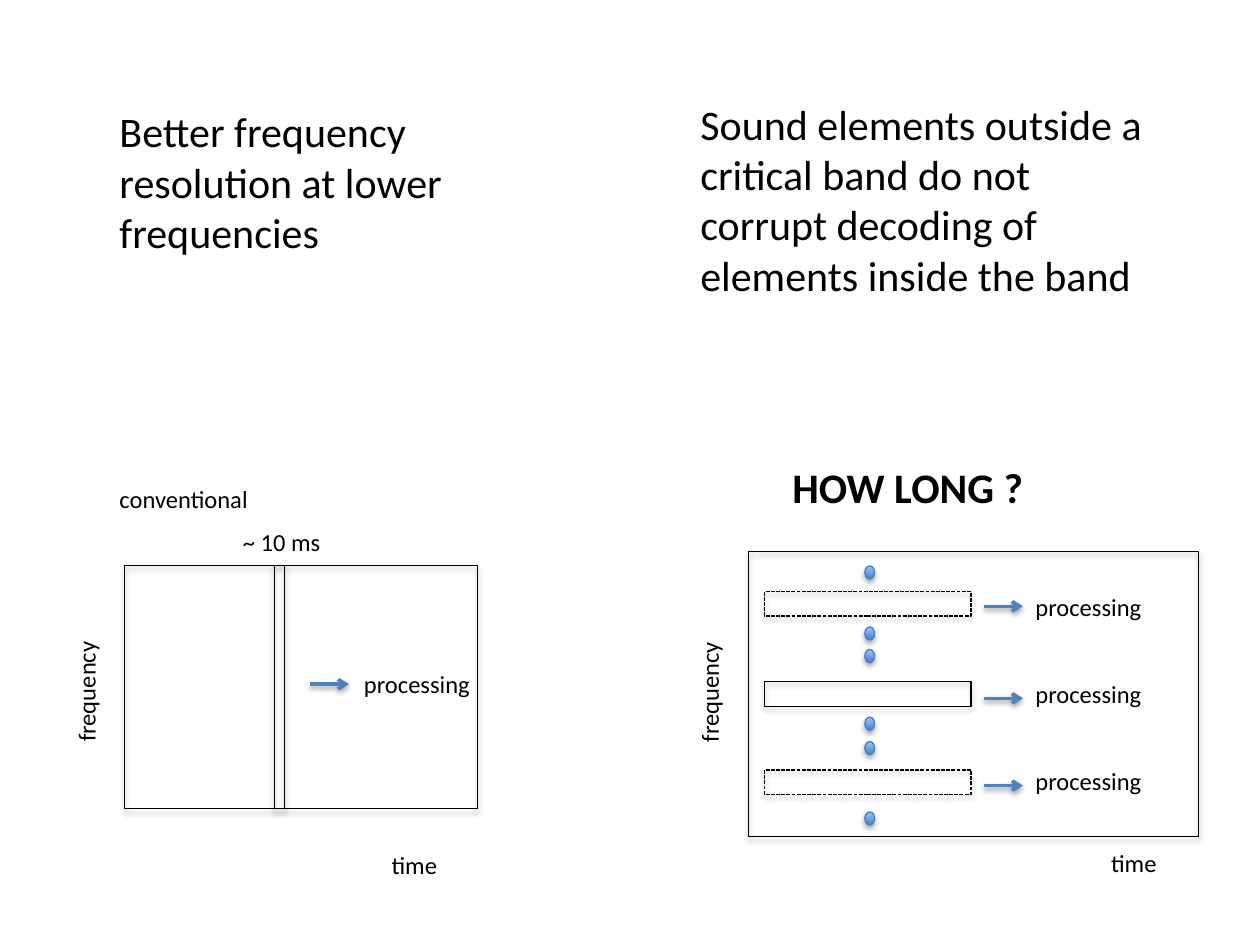
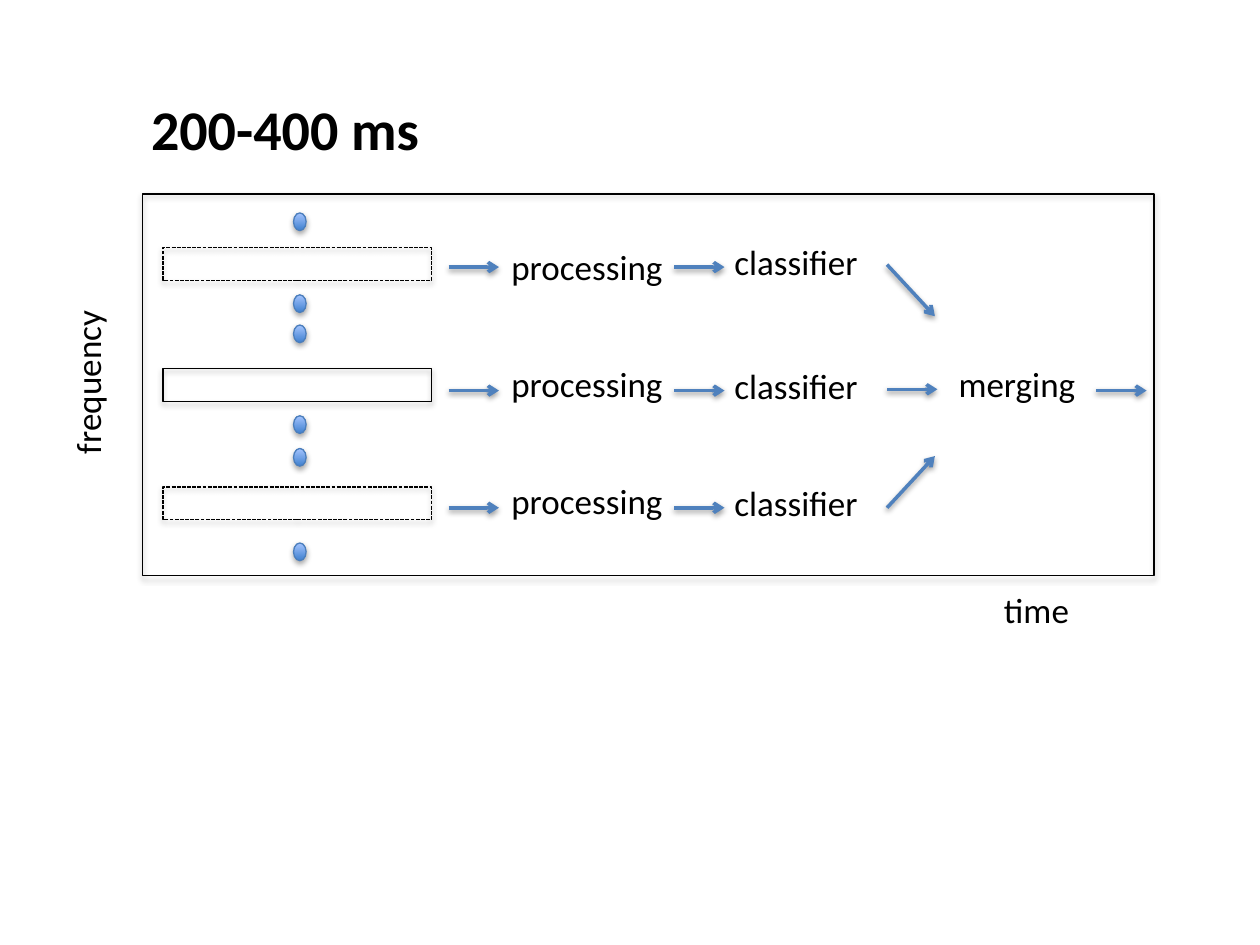
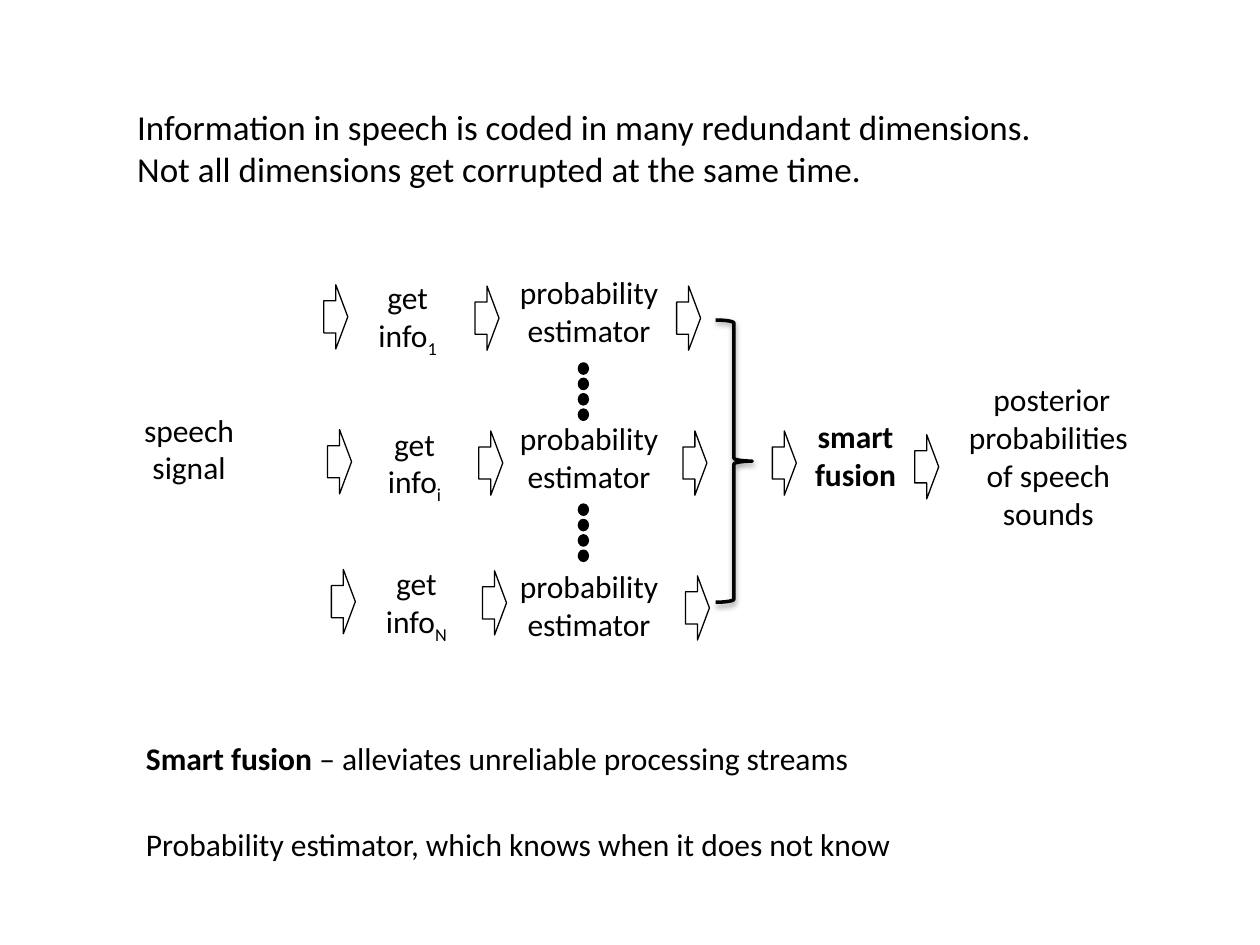
from lxml.etree import SubElement
from pptx import Presentation
from pptx.dml.color import RGBColor
from pptx.enum.dml import MSO_LINE
from pptx.enum.shapes import MSO_CONNECTOR, MSO_SHAPE
from pptx.enum.text import MSO_AUTO_SIZE, PP_ALIGN
from pptx.oxml.ns import qn
from pptx.util import Inches, Pt

BLACK = RGBColor(0x00, 0x00, 0x00)
ARROW_BLUE = RGBColor(0x4F, 0x81, 0xBD)
DOT_EDGE = RGBColor(0x4B, 0x7E, 0xBC)
DOT_DARK = RGBColor(0x3F, 0x80, 0xCE)
DOT_LIGHT = RGBColor(0xA4, 0xC4, 0xFF)
FONT = "Calibri"
BOLD, SUBSCRIPT = "bold", "subscript"
ARROW = "arrow"
SOFT, STRONG = (23000, 35000), (20000, 38000)

deck = Presentation()
deck.slide_width = Inches(10)
deck.slide_height = Inches(7.5)
COL = deck.slide_width / 100
ROW = deck.slide_height / 75


def write(slide, box, lines, size, align=PP_ALIGN.LEFT, wrap=False, rotation=0):
    left, top, width, height = box
    label = slide.shapes.add_textbox(
        int(left * COL), int(top * ROW), int(width * COL), int(height * ROW))
    label.rotation = rotation
    frame = label.text_frame
    frame.word_wrap = wrap
    frame.auto_size = MSO_AUTO_SIZE.SHAPE_TO_FIT_TEXT
    for number, line in enumerate(lines):
        paragraph = frame.add_paragraph() if number else frame.paragraphs[0]
        paragraph.alignment = align
        for piece in line if isinstance(line, list) else [line]:
            words, mark = piece if isinstance(piece, tuple) else (piece, None)
            run = paragraph.add_run()
            run.text = words
            run.font.name = FONT
            run.font.size = Pt(size)
            run.font.color.rgb = BLACK
            run.font.bold = mark == BOLD
            if mark == SUBSCRIPT:
                run.font._element.set("baseline", "-25000")


def draw(slide, kind, box, colour=BLACK, weight=0.75, fill=(), dash=None, shadow=None):
    left, top, width, height = box
    x, y, w, h = int(left * COL), int(top * ROW), int(width * COL), int(height * ROW)
    if kind == ARROW:
        mark = slide.shapes.add_connector(MSO_CONNECTOR.STRAIGHT, x, y, x + w, y + h)
    else:
        mark = slide.shapes.add_shape(kind, x, y, w, h)
        if len(fill) == 2:
            mark.fill.gradient()
            mark.fill.gradient_angle = 90
            for stop, shade in zip(mark.fill.gradient_stops, fill):
                stop.color.rgb = shade
        elif fill:
            mark.fill.solid()
            mark.fill.fore_color.rgb = fill[0]
        else:
            mark.fill.background()
        mark.shadow.inherit = False
    mark.line.color.rgb = colour
    mark.line.width = Pt(weight)
    if dash:
        mark.line.dash_style = dash
    if kind == ARROW:
        SubElement(mark.line._get_or_add_ln(), qn("a:tailEnd"), type="arrow")
    properties = mark._element.spPr
    effects = properties.find(qn("a:effectLst"))
    if effects is None:
        effects = SubElement(properties, qn("a:effectLst"))
    if shadow:
        distance, alpha = shadow
        outer = SubElement(effects, qn("a:outerShdw"), blurRad="40000",
                           dist=str(distance), dir="5400000", rotWithShape="0")
        black = SubElement(outer, qn("a:srgbClr"), val=str(BLACK))
        SubElement(black, qn("a:alpha"), val=str(alpha))


bands, classifiers, fusion = [deck.slides.add_slide(deck.slide_layouts[6]) for _ in range(3)]
flow = dict(colour=ARROW_BLUE, weight=2, shadow=STRONG)

write(bands, (54.6, 7.3, 38.9, 20.2),
      ["Sound elements outside a critical band do not corrupt decoding of "
       "elements inside the band"], 24, wrap=True)
write(bands, (8.5, 7.9, 32, 13.1),
      ["Better frequency resolution at lower frequencies"], 24, wrap=True)
write(bands, (61.9, 36.1, 20.6, 5), [[("HOW LONG ?", BOLD)]], 24)

for left, width in ((9.9, 28), (21.8, 0.8)):
    draw(bands, MSO_SHAPE.RECTANGLE, (left, 44.9, width, 19.3), shadow=SOFT)
draw(bands, ARROW, (24.6, 54.3, 3.1, 0), **flow)
for words, left, top, width in (("conventional", 8.5, 37.9, 12.4), ("~ 10 ms", 18.3, 41.3, 8.2),
                                ("processing", 27.9, 52.6, 10.5), ("time", 30.1, 67, 5.7)):
    write(bands, (left, top, width, 3.4), [words], 14)
write(bands, (1.8, 53.2, 10.1, 3.4), ["frequency"], 14, PP_ALIGN.CENTER, rotation=270)

for slide, left, top, width, across, down, size, time_at, processing_width, axis in (
        (bands, 59.4, 43.8, 35.7, 0.77, 0.745, 14, (87.2, 66.8, 5.7, 3.4), 10.5, (10.1, 3.4)),
        (classifiers, 11.3, 15.4, 80.3, 1, 1, 20, (78.7, 46.2, 8.4, 4.4), 16.5, (13.5, 5.1))):
    draw(slide, MSO_SHAPE.RECTANGLE, (left, top, width, 30.3 * down), shadow=SOFT)
    for bar, arrow, label, dash in ((4.25, 5.8, 3.6, MSO_LINE.SQUARE_DOT),
                                    (13.85, 15.6, 12.9, None),
                                    (23.25, 24.9, 22.2, MSO_LINE.SQUARE_DOT)):
        draw(slide, MSO_SHAPE.RECTANGLE,
             (left + 1.65 * across, top + bar * down, 21.3 * across, 2.6 * down),
             dash=dash, shadow=SOFT)
        draw(slide, ARROW, (left + 24.3 * across, top + arrow * down, 4 * across, 0), **flow)
        write(slide, (left + 28.3 * across, top + label * down, processing_width, 4.4 * down),
              ["processing"], size)
    for dot in (1.5, 8, 10.4, 17.6, 20.2, 27.7):
        draw(slide, MSO_SHAPE.OVAL, (left + 12 * across, top + dot * down, across, 1.4 * down),
             DOT_EDGE, fill=(DOT_DARK, DOT_LIGHT), shadow=SOFT)
    write(slide, time_at, ["time"], size)
    length, depth = axis
    write(slide, (left - 4 * across - length / 2, top + 14.95 * down - depth / 2, length, depth),
          ["frequency"], size, PP_ALIGN.CENTER, rotation=270)

write(classifiers, (11, 7, 23.5, 6.4), [[("200-400 ms", BOLD)]], 32)
for label, arrow, start, run, rise in ((18.6, 21.2, 21, 3.8, 4.1),
                                       (28.4, 31, 30.9, 4, 0),
                                       (37.7, 40.3, 40.3, 3.8, -4.1)):
    draw(classifiers, ARROW, (53.5, arrow, 4, 0), **flow)
    write(classifiers, (57.3, label, 13.8, 4.4), ["classifier"], 20)
    draw(classifiers, ARROW, (70.4, start, run, rise), **flow)
write(classifiers, (75.1, 28.3, 11.4, 4.4), ["merging"], 20)
draw(classifiers, ARROW, (87, 31, 4, 0), **flow)

write(fusion, (9.9, 7.9, 73.8, 7.7),
      ["Information in speech is coded in many redundant dimensions.",
       "Not all dimensions get corrupted at the same time."], 20)
write(fusion, (10.4, 32.1, 9.2, 7.1), ["speech", "signal"], 18, PP_ALIGN.CENTER)
for index, info_at, estimator_top, arrows in (
        ("1", (28.9, 21.6, 6.9, 7.1), 21.2, ((25.7, 22.6), (37.7, 22.7), (53.7, 22.7))),
        ("i", (29.7, 33.2, 6.4, 7.1), 32.8, ((26, 34.1), (38, 34.2), (54.2, 34.2))),
        ("N", (29.5, 44.3, 7.1, 7.1), 44.5, ((26.3, 45.2), (38.3, 45.3), (54.4, 45.7)))):
    write(fusion, info_at, ["get", ["info", (index, SUBSCRIPT)]], 18, PP_ALIGN.CENTER)
    write(fusion, (40.2, estimator_top, 13.1, 7.1), ["probability", "estimator"], 18,
          PP_ALIGN.CENTER)
    for left, top in arrows:
        draw(fusion, MSO_SHAPE.RIGHT_ARROW, (left, top, 1.9, 5.1))
for first in (28.8, 40):
    for step in range(4):
        draw(fusion, MSO_SHAPE.OVAL, (45.9, first + 1.22 * step, 0.8, 0.9), fill=(BLACK,))
draw(fusion, MSO_SHAPE.RIGHT_BRACE, (56.8, 25.4, 2.9, 22.4), weight=2, shadow=STRONG)
for left, top in ((61.3, 34.2), (72.6, 34.5)):
    draw(fusion, MSO_SHAPE.RIGHT_ARROW, (left, top, 1.9, 5.1))
write(fusion, (62, 32.6, 11.8, 7.1), [[("smart", BOLD)], [("fusion", BOLD)]], 18,
      PP_ALIGN.CENTER, wrap=True)
write(fusion, (75.8, 29.7, 14.8, 13.1),
      [" posterior", "probabilities", "of speech", "sounds"], 18, PP_ALIGN.CENTER)
write(fusion, (10.6, 58.2, 58.5, 4),
      [[("Smart fusion ", BOLD), "– alleviates unreliable processing streams"]], 18)
write(fusion, (10.6, 65, 63.5, 4),
      ["Probability estimator, which knows when it does not know"], 18)

deck.save("out.pptx")
